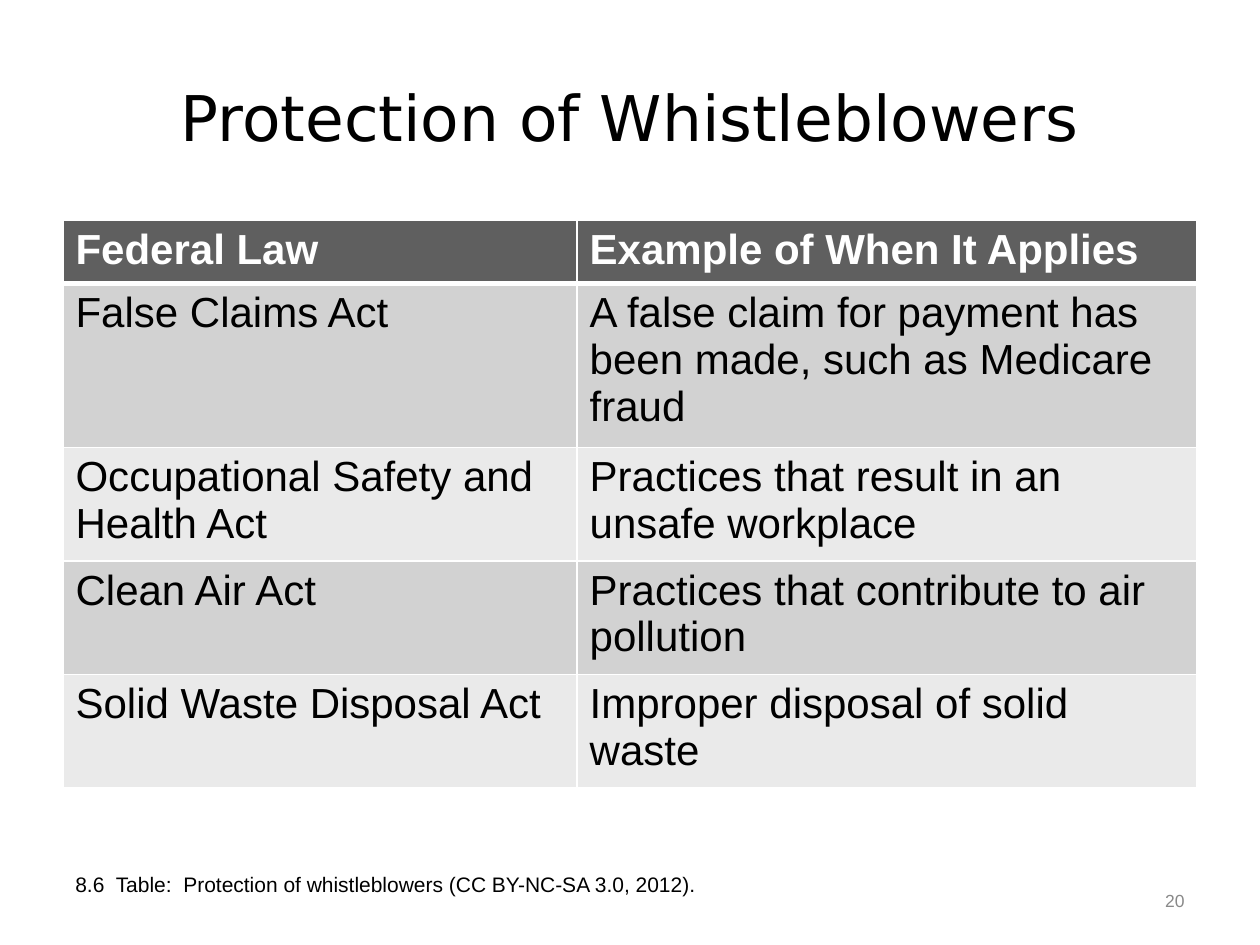
from lxml.etree import SubElement
from pptx import Presentation
from pptx.dml.color import RGBColor
from pptx.enum.text import MSO_ANCHOR, PP_ALIGN
from pptx.oxml.ns import qn
from pptx.util import Pt

LAWS = [
    ("Federal Law", "Example of When It Applies"),
    ("False Claims Act",
     "A false claim for payment has been made, such as Medicare fraud"),
    ("Occupational Safety and Health Act",
     "Practices that result in an unsafe workplace"),
    ("Clean Air Act", "Practices that contribute to air pollution"),
    ("Solid Waste Disposal Act", "Improper disposal of solid waste"),
]
HEADER_FILL = "5F5F5F"
BAND_FILLS = ("EAEAEA", "D2D2D2")
WHITE = "FFFFFF"


def color(hex_text):
    return RGBColor.from_string(hex_text)


def write(frame, text, size=12, font="Arial", ink="000000", bold=False,
          align=PP_ALIGN.LEFT, anchor=MSO_ANCHOR.TOP):
    frame.word_wrap = True
    frame.vertical_anchor = anchor
    para = frame.paragraphs[0]
    para.alignment = align
    span = para.add_run()
    span.text = text
    span.font.size = Pt(size)
    span.font.name = font
    span.font.bold = bold
    span.font.color.rgb = color(ink)


def add_borders(cell, top=1, bottom=1):
    """Draw white cell borders; widths are in points."""
    properties = cell._tc.get_or_add_tcPr()
    for side, width in (("L", 1), ("R", 1), ("T", top), ("B", bottom)):
        line = SubElement(properties, qn(f"a:ln{side}"), w=str(Pt(width)))
        fill = SubElement(line, qn("a:solidFill"))
        SubElement(fill, qn("a:srgbClr"), val=WHITE)


class SlideBuilder:
    def __init__(self, deck):
        self.page = deck.slides.add_slide(deck.slide_layouts[6])
        self.page.background.fill.solid()
        self.page.background.fill.fore_color.rgb = color(WHITE)

    def text(self, left, top, width, height, text, **style):
        box = self.page.shapes.add_textbox(
            Pt(left), Pt(top), Pt(width), Pt(height))
        write(box.text_frame, text, **style)

    def table(self, left, top, widths, row_height, rows):
        table = self.page.shapes.add_table(
            len(rows), len(widths), Pt(left), Pt(top),
            Pt(sum(widths)), Pt(row_height * len(rows))).table
        for column, width in zip(table.columns, widths):
            column.width = Pt(width)
        for row, texts in enumerate(rows):
            header = row == 0
            for column, text in enumerate(texts):
                cell = table.cell(row, column)
                add_borders(cell, top=3 if row == 1 else 1,
                            bottom=3 if header else 1)
                cell.fill.solid()
                cell.fill.fore_color.rgb = color(
                    HEADER_FILL if header else BAND_FILLS[row % 2])
                write(cell.text_frame, text, size=24, bold=header,
                      ink=WHITE if header else "000000")


def main():
    deck = Presentation()
    deck.slide_width, deck.slide_height = Pt(720), Pt(540)
    slide = SlideBuilder(deck)
    slide.text(36, 21.6, 648, 90, "Protection of Whistleblowers", size=36,
               font="DejaVu Sans", align=PP_ALIGN.CENTER,
               anchor=MSO_ANCHOR.MIDDLE)
    slide.table(36, 126, (293.8, 354.2), 29.5, LAWS)
    slide.text(36, 494.6, 601, 41.8,
               "8.6  Table:  Protection of whistleblowers "
               "(CC BY-NC-SA 3.0, 2012).")
    slide.text(643.7, 493.2, 40.3, 43.2, "20", size=10, ink="898989",
               align=PP_ALIGN.RIGHT, anchor=MSO_ANCHOR.MIDDLE)
    deck.save("out.pptx")


if __name__ == "__main__":
    main()
